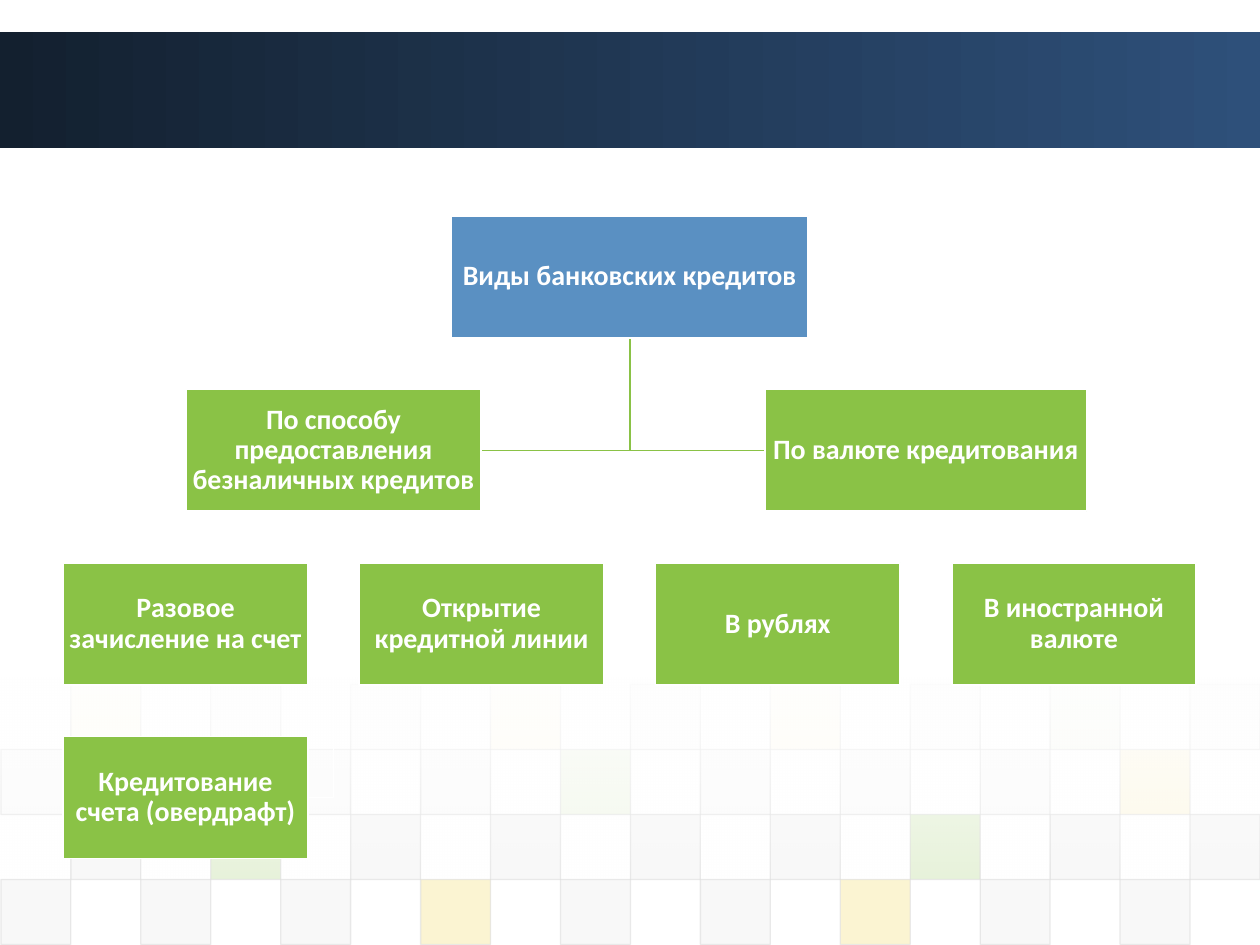
from dataclasses import dataclass

from lxml import etree
from pptx import Presentation
from pptx.dml.color import RGBColor
from pptx.enum.shapes import MSO_SHAPE
from pptx.enum.text import MSO_ANCHOR, PP_ALIGN
from pptx.oxml.ns import qn
from pptx.util import Cm, Pt

RECTANGLE = MSO_SHAPE.RECTANGLE
MIDDLE = MSO_ANCHOR.MIDDLE
CENTER = PP_ALIGN.CENTER


@dataclass(frozen=True)
class Theme:
    font: str = "Calibri"
    label_size: int = 16
    line_width: float = 1
    tile_line_width: float = 0.75
    white: str = "FFFFFF"
    blue: str = "5A90C2"
    green: str = "8AC246"
    yellow: str = "EFC821"
    gray: str = "DDDDDD"
    light_gray: str = "EAEAEA"
    band_start: str = "13202F"
    band_end: str = "2E507A"


@dataclass(frozen=True)
class Node:
    """One chart box; column may be fractional to sit between leaf columns."""
    text: str
    column: float
    row: int
    width: float
    fill: str
    parent: int | None = None

    @property
    def center(self):
        return FIRST_CENTER + self.column * COLUMN_PITCH

    @property
    def left(self):
        return self.center - self.width / 2

    @property
    def top(self):
        return FIRST_TOP + self.row * ROW_PITCH

    @property
    def bottom(self):
        return self.top + BOX_HEIGHT


THEME = Theme()
PAGE_WIDTH, PAGE_HEIGHT = 25.4, 19.05

FIRST_CENTER, COLUMN_PITCH = 3.74, 5.97
FIRST_TOP, ROW_PITCH, BOX_HEIGHT = 4.35, 3.5, 2.46
LEAF_WIDTH = 4.93

NODES = [
    Node("Виды банковских кредитов", 1.5, 0, 7.2, THEME.blue),
    Node("По способу предоставления безналичных кредитов", 0.5, 1, 5.94, THEME.green, 0),
    Node("Разовое зачисление на счет", 0, 2, LEAF_WIDTH, THEME.green, 1),
    Node("Открытие кредитной линии", 1, 2, LEAF_WIDTH, THEME.green, 1),
    Node("Кредитование счета (овердрафт)", 0, 3, LEAF_WIDTH, THEME.green, 1),
    Node("По валюте кредитования", 2.5, 1, 6.48, THEME.green, 0),
    Node("В рублях", 2, 2, LEAF_WIDTH, THEME.green, 5),
    Node("В иностранной валюте", 3, 2, LEAF_WIDTH, THEME.green, 5),
]

TILE_LEFT, TILE_TOP, TILE_WIDTH, TILE_HEIGHT = 0.02, 13.8, 1.41, 1.31
TILE_COLORS = {"d": THEME.gray, "l": THEME.light_gray,
               "g": THEME.green, "y": THEME.yellow}
# Opacity in percent and the tile colours of each row, from top to bottom
TILE_ROWS = [
    (5, ".y.l.l.y.d.y.l.g.l"),
    (10, "d...d.d.g.d.d.d.y."),
    (20, ".d.g.d.d.d.d.g.d.d"),
    (20, "d.d.d.y.d.d.y.d.d."),
]


def add_rectangle(page, left, top, width, height, fill=None, line=None, line_width=1):
    box = page.shapes.add_shape(RECTANGLE, Cm(left), Cm(top), Cm(width), Cm(height))
    box.shadow.inherit = False
    if fill:
        box.fill.solid()
        box.fill.fore_color.rgb = RGBColor.from_string(fill)
    set_line(box, line, line_width)
    return box


def set_line(shape, color, width):
    if color:
        shape.line.color.rgb = RGBColor.from_string(color)
        shape.line.width = Pt(width)
    else:
        shape.line.fill.background()


def set_gradient(shape, colors, angle):
    """Fill with two colours; the angle runs counter-clockwise from the left."""
    shape.fill.gradient()
    shape.fill.gradient_angle = angle
    for stop, position, color in zip(shape.fill.gradient_stops, (0, 1), colors):
        stop.position = position
        stop.color.rgb = RGBColor.from_string(color)


def set_opacity(shape, *percents):
    """Give each colour of the shape, fill first and line last, its opacity."""
    for color, percent in zip(shape._element.spPr.iter(qn("a:srgbClr")), percents):
        etree.SubElement(color, qn("a:alpha"), val=str(percent * 1000))


def write_text(shape, text, *, size, color, bold=False, align=CENTER, spacing=0.9):
    frame = shape.text_frame
    frame.word_wrap = True
    frame.vertical_anchor = MIDDLE
    frame.margin_left = frame.margin_right = Cm(0.03)
    frame.margin_top = frame.margin_bottom = Cm(0.03)
    para = frame.paragraphs[0]
    para.alignment = align
    para.line_spacing = spacing
    span = para.add_run()
    span.text = text
    span.font.name = THEME.font
    span.font.size = Pt(size)
    span.font.bold = bold
    span.font.color.rgb = RGBColor.from_string(color)


def add_mosaic(page):
    for row, (opacity, pattern) in enumerate(TILE_ROWS):
        for column, key in enumerate(pattern):
            if key in TILE_COLORS:
                tile = add_rectangle(
                    page, TILE_LEFT + column * TILE_WIDTH, TILE_TOP + row * TILE_HEIGHT,
                    TILE_WIDTH, TILE_HEIGHT, TILE_COLORS[key],
                    THEME.gray, THEME.tile_line_width)
                set_opacity(tile, opacity, 60)


def add_background(page):
    band = add_rectangle(page, 0, 0.64, PAGE_WIDTH, 2.34)
    set_gradient(band, (THEME.band_start, THEME.band_end), 0)
    add_mosaic(page)
    veil = add_rectangle(page, 0, 13.65, PAGE_WIDTH, 4.1)
    set_gradient(veil, (THEME.white, THEME.white), 270)
    set_opacity(veil, 90, 0)


def add_elbow(page, parent, child):
    """Run down from the parent, then sideways to the child's nearer edge."""
    middle = child.top + BOX_HEIGHT / 2
    edge = child.left + (child.width if child.center < parent.center else 0)
    builder = page.shapes.build_freeform(Cm(parent.center), Cm(parent.bottom))
    builder.add_line_segments(
        [(Cm(parent.center), Cm(middle)), (Cm(edge), Cm(middle))], close=False)
    elbow = builder.convert_to_shape()
    elbow.shadow.inherit = False
    elbow.fill.background()
    set_line(elbow, THEME.green if parent.row == 0 else THEME.white, THEME.line_width)


def add_node(page, node):
    box = add_rectangle(page, node.left, node.top, node.width, BOX_HEIGHT,
                        node.fill, THEME.white, THEME.line_width)
    write_text(box, node.text, size=THEME.label_size, color=THEME.white, bold=True)


def main():
    deck = Presentation()
    deck.slide_width, deck.slide_height = Cm(PAGE_WIDTH), Cm(PAGE_HEIGHT)
    page = deck.slides.add_slide(deck.slide_layouts.get_by_name("Blank"))
    add_background(page)
    for node in NODES:
        if node.parent is not None:
            add_elbow(page, NODES[node.parent], node)
    for node in NODES:
        add_node(page, node)
    deck.save("out.pptx")


if __name__ == "__main__":
    main()
